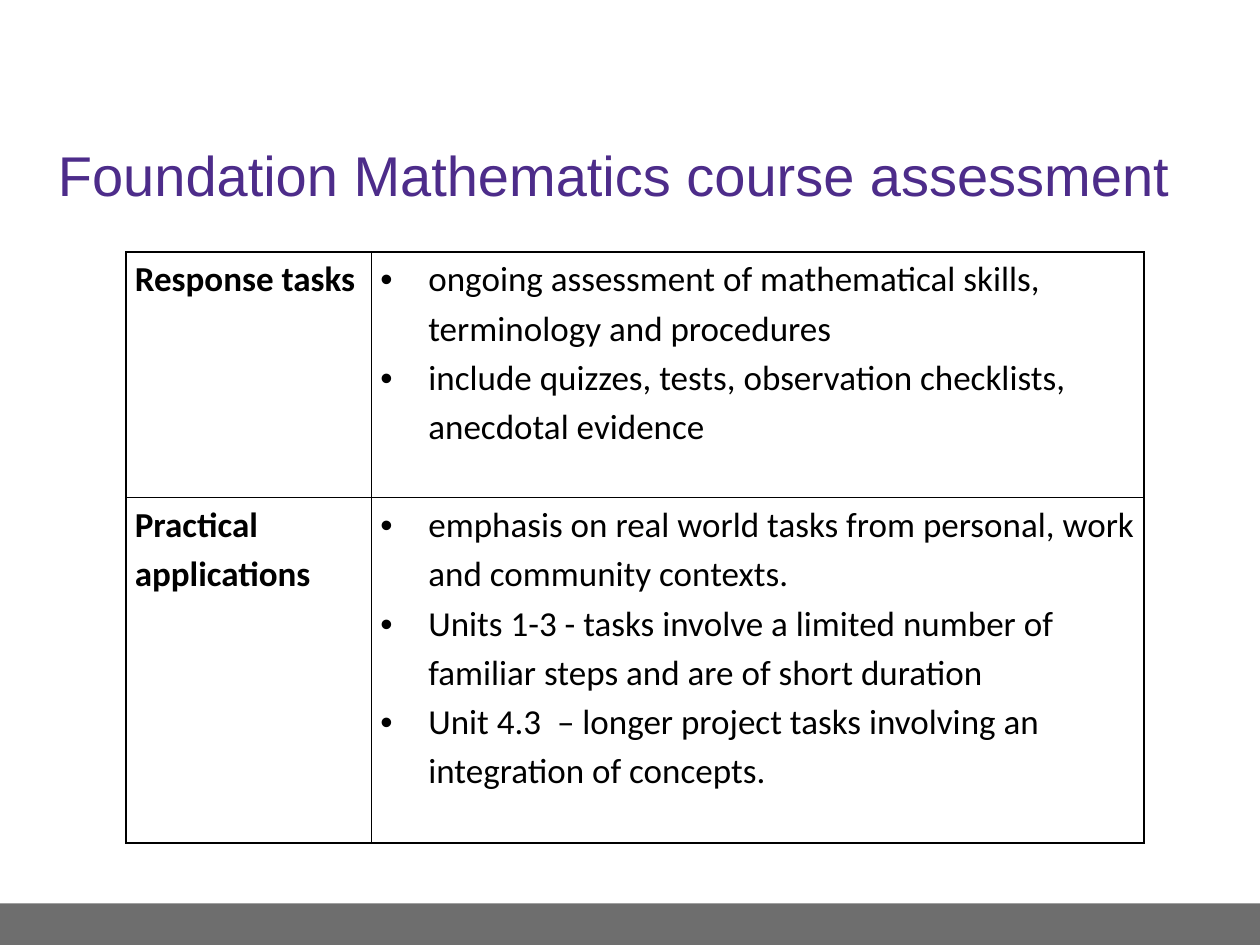
from lxml.etree import SubElement
from pptx import Presentation
from pptx.dml.color import RGBColor
from pptx.enum.shapes import MSO_SHAPE as Shape
from pptx.enum.text import MSO_ANCHOR as Anchor, PP_ALIGN as Align
from pptx.oxml import parse_xml
from pptx.oxml.ns import nsdecls, qn
from pptx.util import Inches, Pt

PURPLE = RGBColor(0x4D, 0x2C, 0x8A)
GREY = RGBColor(0x6E, 0x6E, 0x6E)
BLACK = RGBColor(0, 0, 0)

COLUMN_WIDTHS = (1.95, 6.13)
ROW_HEIGHTS = (1.95, 2.74)
ASSESSMENTS = (
    ("Response tasks", (
        "ongoing assessment of mathematical skills, terminology and procedures",
        "include quizzes, tests, observation checklists, anecdotal evidence",
    )),
    ("Practical applications", (
        "emphasis on real world tasks from personal, work and community contexts.",
        "Units 1-3 - tasks involve a limited number of familiar steps and are of short duration",
        "Unit 4.3  – longer project tasks involving an integration of concepts.",
    )),
)


def add_footer_band(page, left, top, width, height):
    band = page.shapes.add_shape(Shape.RECTANGLE, left, top, width, height)
    band.shadow.inherit = False
    band.fill.solid()
    band.fill.fore_color.rgb = GREY
    band.line.fill.background()


def set_title(page, left, top, width, height):
    title = page.shapes.title
    title.left, title.top, title.width, title.height = left, top, width, height
    frame = title.text_frame
    frame.text = "Foundation Mathematics course assessment"
    frame.vertical_anchor = Anchor.MIDDLE
    para = frame.paragraphs[0]
    para.alignment = Align.LEFT
    font = para.runs[0].font
    font.name, font.size, font.color.rgb = "Arial", Pt(32), PURPLE


def add_bullet(para):
    """Give the paragraph a bullet, a hanging indent and a tab stop."""
    properties = para._p.get_or_add_pPr()
    properties.set("marL", str(Inches(0.38)))
    properties.set("indent", str(-Inches(0.38)))
    SubElement(properties, qn("a:buFont"), typeface="Arial")
    SubElement(properties, qn("a:buChar"), char="•")
    tabs = SubElement(properties, qn("a:tabLst"))
    SubElement(tabs, qn("a:tab"), pos=str(Inches(0.5)), algn="l")


def style_cell(cell):
    """Set the margins, the clear fill and a thin black border all round."""
    cell.margin_left = cell.margin_right = Inches(0.07)
    cell.margin_top = cell.margin_bottom = 0
    cell.fill.background()
    properties = cell._tc.get_or_add_tcPr()
    for index, side in enumerate(("lnL", "lnR", "lnT", "lnB")):
        properties.insert(index, parse_xml(
            f'<a:{side} {nsdecls("a")} w="{Pt(1)}"><a:solidFill>'
            f'<a:srgbClr val="{BLACK}"/></a:solidFill></a:{side}>'))


def fill_cell(cell, lines, bold=False, bulleted=False):
    style_cell(cell)
    cell.text_frame.text = "\n".join(lines)
    for para in cell.text_frame.paragraphs:
        para.line_spacing = 1.15
        if bulleted:
            add_bullet(para)
        font = para.runs[0].font
        font.name, font.size, font.bold = "Calibri", Pt(20), bold
        font.color.rgb = BLACK


def add_assessment_table(page, left, top):
    table = page.shapes.add_table(
        len(ASSESSMENTS), len(COLUMN_WIDTHS), left, top,
        Inches(sum(COLUMN_WIDTHS)), Inches(sum(ROW_HEIGHTS))).table
    table.first_row = table.horz_banding = False
    for column, width in zip(table.columns, COLUMN_WIDTHS):
        column.width = Inches(width)
    for row, height, (task, details) in zip(table.rows, ROW_HEIGHTS, ASSESSMENTS):
        row.height = Inches(height)
        fill_cell(row.cells[0], [task], bold=True)
        fill_cell(row.cells[1], details, bulleted=True)


def main():
    deck = Presentation()
    deck.slide_width, deck.slide_height = Inches(10), Inches(7.5)
    page = deck.slides.add_slide(deck.slide_layouts[5])
    add_footer_band(page, 0, Inches(7.17), deck.slide_width, Inches(0.33))
    set_title(page, Inches(0.36), Inches(0.92), Inches(9.35), Inches(0.92))
    add_assessment_table(page, Inches(1), Inches(2))
    deck.save("out.pptx")


if __name__ == "__main__":
    main()
